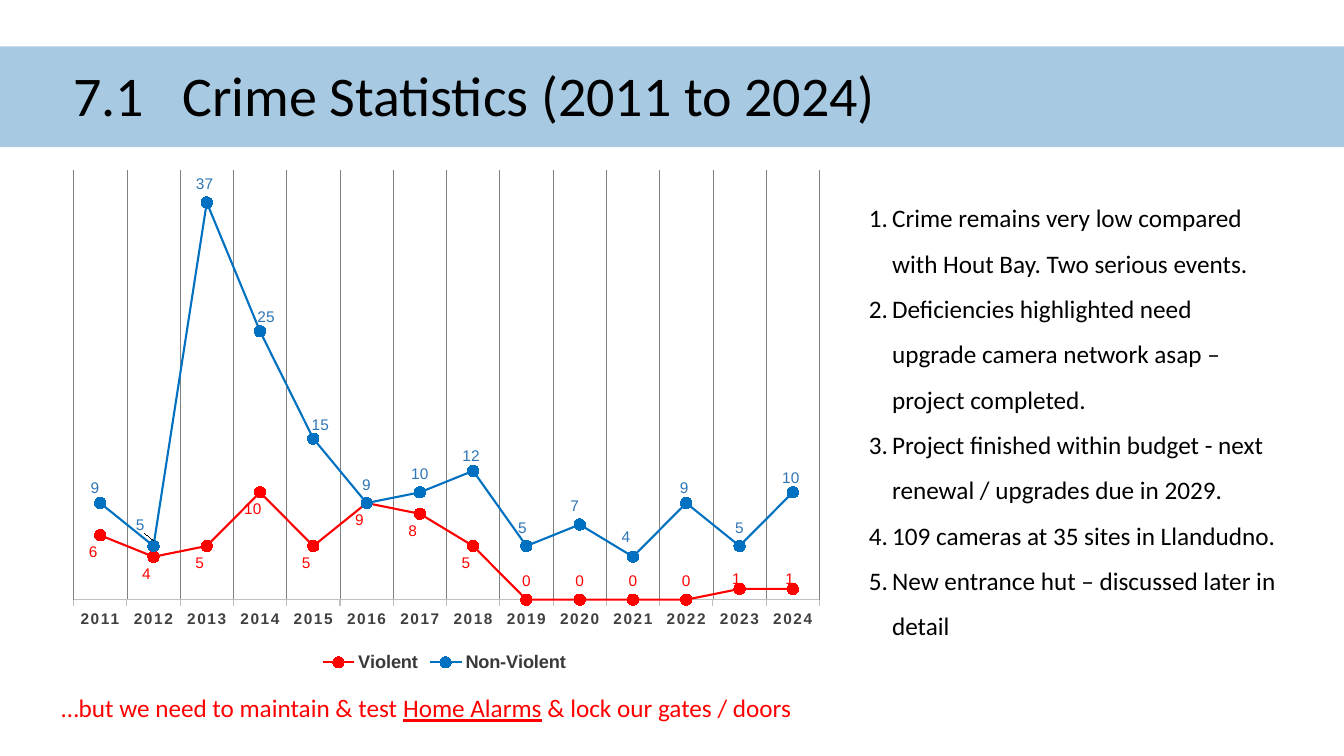
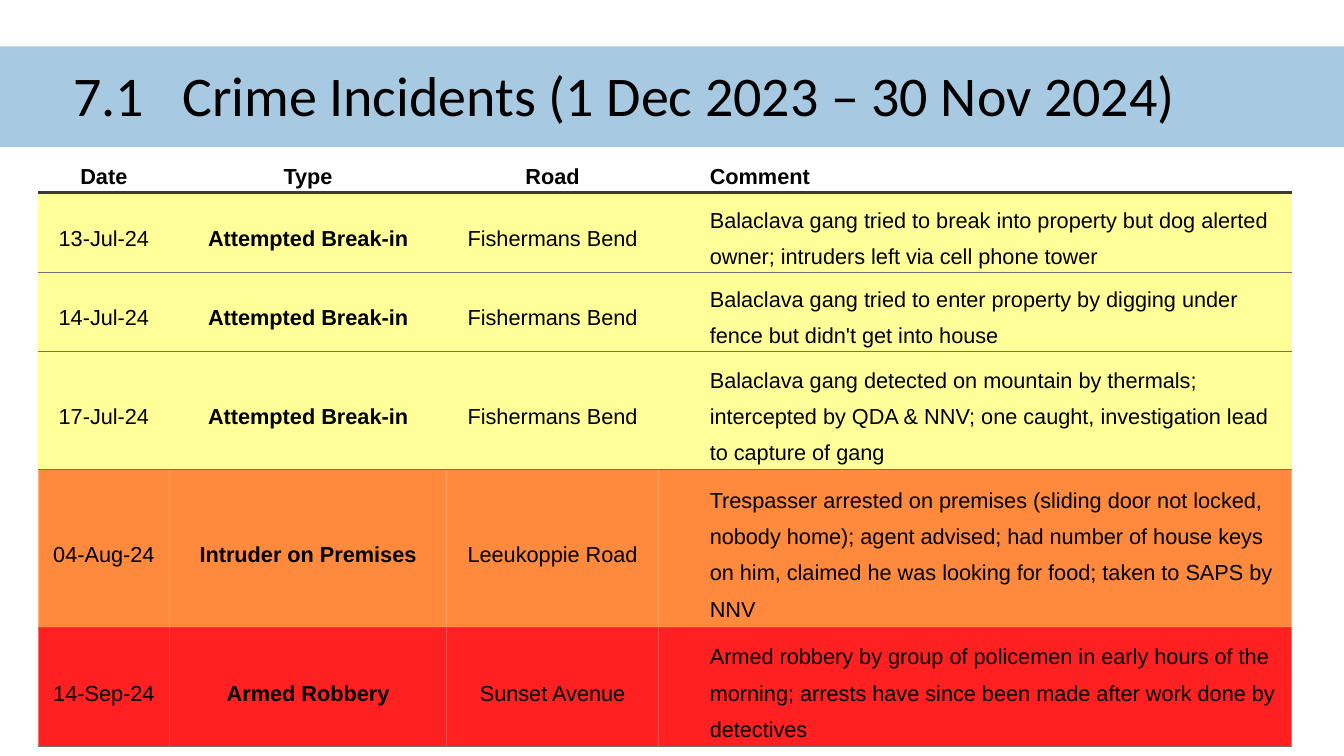
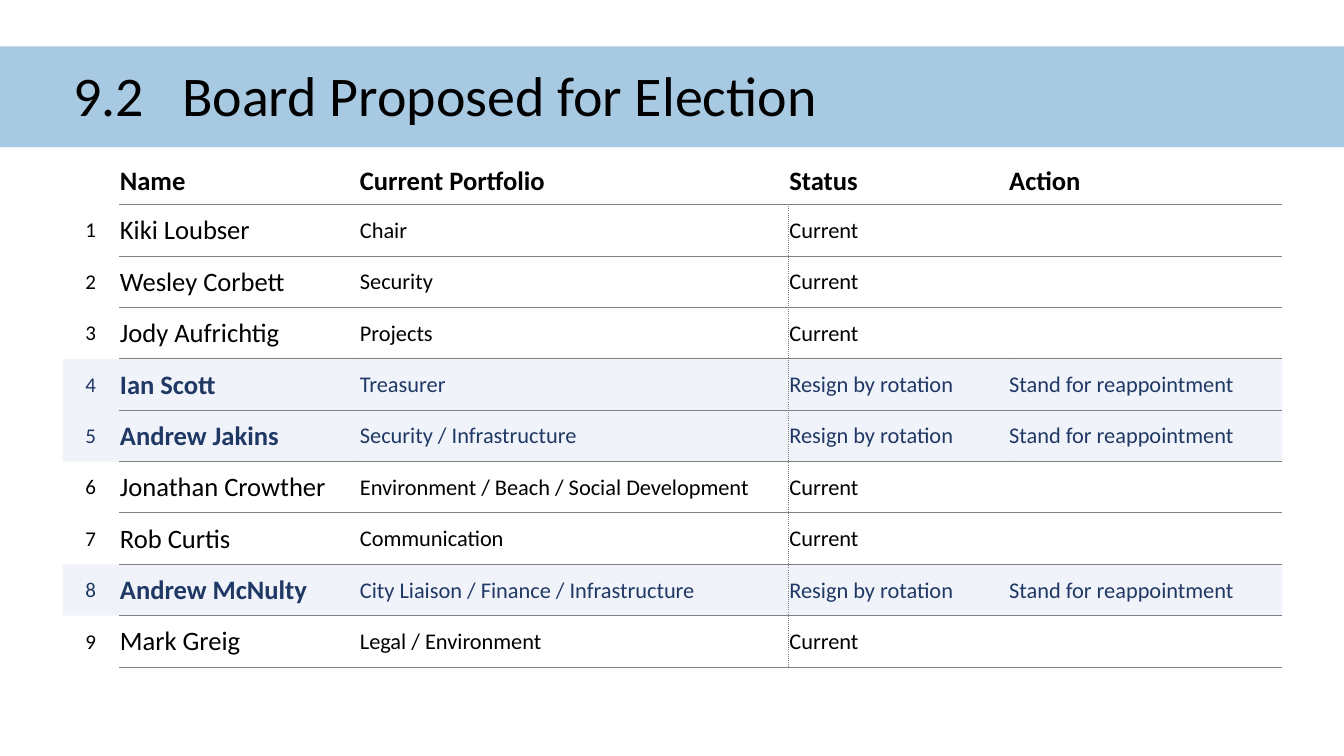
import pptx
import pptx.chart.data
import pptx.dml.color
import pptx.enum.chart
import pptx.enum.shapes
import pptx.enum.text
import pptx.oxml
import pptx.oxml.ns
import pptx.util

PX = 9144  # EMU in one px, 100 px to the inch
WIDE, HIGH = 1333, 750

HUES = {
    "ink": "000000", "band": "3C8AC0", "red": "FF0000", "blue": "0070C0",
    "tag": "2E75B6", "grey": "808080", "rule": "767171", "dark": "3B3838",
    "axis": "BFBFBF", "year": "404040", "lemon": "FFFF99",
    "amber": "FF6600", "navy": "203864", "pale": "B4C7E7",
}
MID = pptx.enum.text.MSO_ANCHOR.MIDDLE
CENTER = pptx.enum.text.PP_ALIGN.CENTER
SPOT = pptx.enum.chart.XL_LABEL_POSITION

YEARS = [str(year) for year in range(2011, 2025)]
VIOLENT = [6, 4, 5, 10, 5, 9, 8, 5, 0, 0, 0, 0, 1, 1]
OTHER = [9, 5, 37, 25, 15, 9, 10, 12, 5, 7, 4, 9, 5, 10]
# Label shifts: point -> (side, right, down)
LOW = {i: ("BELOW", -7, -2) for i in range(8)}
LOW.update({i: ("ABOVE", -3, 8) for i in (12, 13)})
HIGHER = {i: ("ABOVE", dx, dy) for i, dx, dy in (
    (0, -5, 3), (1, -13, -3), (2, -2, 0), (3, 6, 4), (4, 7, 5), (7, -2, 3),
    (8, -4, 0), (9, -5, 0), (10, -7, -2), (11, -2, 3), (13, -2, 4))}

NOTES = [
    "Crime remains very low compared with Hout Bay. Two serious events.",
    "Deficiencies highlighted need upgrade camera network asap – project completed.",
    "Project finished within budget - next renewal / upgrades due in 2029.",
    "109 cameras at 35 sites in Llandudno.",
    "New entrance hut – discussed later in detail",
]

# Incidents: height, fill, opacity, texts
EVENTS = [
    (43, None, 100, ("Date", "Type", "Road", "Comment")),
    (79, "lemon", 100, (
        "13-Jul-24", "Attempted Break-in", "Fishermans Bend",
        "Balaclava gang tried to break into property but dog alerted owner; "
        "intruders left via cell phone tower")),
    (75, "lemon", 100, (
        "14-Jul-24", "Attempted Break-in", "Fishermans Bend",
        "Balaclava gang tried to enter property by digging under fence but "
        "didn't get into house")),
    (109, "lemon", 100, (
        "17-Jul-24", "Attempted Break-in", "Fishermans Bend",
        "Balaclava gang detected on mountain by thermals; intercepted by "
        "QDA & NNV; one caught, investigation lead to capture of gang")),
    (157, "amber", 76, (
        "04-Aug-24", "Intruder on Premises", "Leeukoppie Road",
        "Trespasser arrested on premises (sliding door not locked, nobody "
        "home); agent advised; had number of house keys on him, claimed he "
        "was looking for food; taken to SAPS by NNV")),
    (118, "red", 87, (
        "14-Sep-24", "Armed Robbery", "Sunset Avenue",
        "Armed robbery by group of policemen in early hours of the morning; "
        "arrests have since been made after work done by detectives")),
]

# Board: name, portfolio, whether up for rotation
BOARD = [
    ("Kiki Loubser", "Chair", False),
    ("Wesley Corbett", "Security", False),
    ("Jody Aufrichtig", "Projects", False),
    ("Ian Scott", "Treasurer", True),
    ("Andrew Jakins", "Security / Infrastructure", True),
    ("Jonathan Crowther", "Environment / Beach / Social Development", False),
    ("Rob Curtis", "Communication", False),
    ("Andrew McNulty", "City Liaison / Finance / Infrastructure", True),
    ("Mark Greig", "Legal / Environment", False),
]


# Basics
def px(*nums):
    return [pptx.util.Emu(n * PX) for n in nums]


def rgb(hue):
    return pptx.dml.color.RGBColor.from_string(HUES[hue])


def style(font, size, hue="ink", face="Calibri", bold=False):
    font.size = pptx.util.Pt(size)
    font.name = face
    font.bold = bold
    font.color.rgb = rgb(hue)


def stroke(line, hue, width):
    line.color.rgb = rgb(hue)
    line.width = pptx.util.Pt(width)


def add(parent, tag, **attrs):
    node = pptx.oxml.ns.qn(tag)
    item = parent.makeelement(node, attrs)
    parent.append(item)
    return item


def paint(fill, props, hue, alpha=100):
    fill.solid()
    fill.fore_color.rgb = rgb(hue)
    if alpha < 100:
        tint = props.find(pptx.oxml.ns.qn("a:solidFill"))[0]
        add(tint, "a:alpha", val=str(alpha * 1000))


def text_box(slide, *area):
    frame = slide.shapes.add_textbox(*px(*area)).text_frame
    frame.word_wrap = True
    return frame


# Band and title on every slide
def start(deck, num, title):
    slide = deck.slides.add_slide(deck.slide_layouts[6])
    rect = pptx.enum.shapes.MSO_SHAPE.RECTANGLE
    band = slide.shapes.add_shape(rect, *px(0, 46, WIDE, 100))
    band.shadow.inherit = False
    band.line.fill.background()
    paint(band.fill, band.element.spPr, "band", 45)
    frame = text_box(slide, 63, 52, 1150, 91)
    frame.vertical_anchor = MID
    para = frame.paragraphs[0]
    para.text = f"{num}\t{title}"
    para.line_spacing = 0.9
    tabs = add(para._p.get_or_add_pPr(), "a:tabLst")
    add(tabs, "a:tab", pos=str(108 * PX), algn="l")
    style(para.font, 40)
    return slide


# Line chart
def label(line, hue, shifts, wide, high):
    tags = line.data_labels
    tags.show_value = True
    tags.position = SPOT.ABOVE
    style(tags.font, 11, hue, "Arial")
    for i, (side, dx, dy) in shifts.items():
        tag = line.points[i].data_label
        style(tag.font, 11, hue, "Arial")
        tag.position = SPOT[side]
        node = line._element.xpath(f'c:dLbls/c:dLbl[c:idx/@val="{i}"]')[0]
        place = add(node, "c:layout")
        node.insert(1, place)
        spot = add(place, "c:manualLayout")
        add(spot, "c:x", val=f"{dx / wide:.4f}")
        add(spot, "c:y", val=f"{dy / high:.4f}")


def set_plot(chart, **box):
    area = chart._chartSpace.chart.plotArea
    for old in area.findall(pptx.oxml.ns.qn("c:layout")):
        area.remove(old)
    place = add(area, "c:layout")
    area.insert(0, place)
    spot = add(place, "c:manualLayout")
    add(spot, "c:layoutTarget", val="inner")
    add(spot, "c:xMode", val="edge")
    add(spot, "c:yMode", val="edge")
    for key, val in box.items():
        add(spot, f"c:{key}", val=str(val))


def set_axes(chart):
    years, count = chart.category_axis, chart.value_axis
    years.has_major_gridlines = True
    stroke(years.major_gridlines.format.line, "grey", 0.5)
    stroke(years.format.line, "axis", 0.75)
    style(years.tick_labels.font, 11, "year", "Arial", True)
    for props in years._element.xpath(".//a:defRPr"):
        props.set("spc", "100")
    count.has_major_gridlines = False
    count.minimum_scale, count.maximum_scale = 0, 40
    count.major_unit = 5
    count.tick_label_position = pptx.enum.chart.XL_TICK_LABEL_POSITION.NONE
    count.format.line.fill.background()


def add_lines(slide, left, top, wide, high):
    data = pptx.chart.data.CategoryChartData(number_format="0")
    data.categories = YEARS
    data.add_series("Violent", VIOLENT)
    data.add_series("Non-Violent", OTHER)
    kind = pptx.enum.chart.XL_CHART_TYPE.LINE_MARKERS
    chart = slide.shapes.add_chart(
        kind, *px(left, top, wide, high), data).chart
    style(chart.font, 13)
    chart.has_title = False
    chart.has_legend = True
    chart.legend.position = pptx.enum.chart.XL_LEGEND_POSITION.BOTTOM
    chart.legend.include_in_layout = False
    style(chart.legend.font, 13, "dark", "Arial", True)
    plot = chart.plots[0]
    plot.vary_by_categories = False
    looks = (("red", "red", LOW), ("blue", "tag", HIGHER))
    for line, (hue, tag, shifts) in zip(plot.series, looks):
        line.smooth = False
        stroke(line.format.line, hue, 1.5)
        line.marker.style = pptx.enum.chart.XL_MARKER_STYLE.CIRCLE
        line.marker.size = 8
        line.marker.format.fill.solid()
        line.marker.format.fill.fore_color.rgb = rgb(hue)
        stroke(line.marker.format.line, hue, 0.75)
        label(line, tag, shifts, wide, high)
    set_axes(chart)
    set_plot(chart, x=0.048, y=0.042, w=0.91, h=0.813)


# Tables
def add_grid(slide, left, top, cols, rows):
    area = px(left, top, sum(cols), sum(rows))
    grid = slide.shapes.add_table(len(rows), len(cols), *area).table
    grid.first_row = grid.horz_banding = False
    for col, wide in zip(grid.columns, px(*cols)):
        col.width = wide
    for row, high in zip(grid.rows, px(*rows)):
        row.height = high
    return grid


def edge(cell, **sides):
    props = cell._tc.get_or_add_tcPr()
    for side in "LRTB":
        if side not in sides:
            add(add(props, f"a:ln{side}", w="0"), "a:noFill")
            continue
        hue, width, dash = sides[side]
        line = add(props, f"a:ln{side}", w=str(int(width * 12700)))
        add(add(line, "a:solidFill"), "a:srgbClr", val=HUES[hue])
        add(line, "a:prstDash", val=dash)


def fill_cell(cell, text, sides, fill=None, alpha=100):
    edge(cell, **sides)
    if fill:
        paint(cell.fill, cell._tc.tcPr, fill, alpha)
    else:
        cell.fill.background()
    cell.vertical_anchor = MID
    cell.margin_left, cell.margin_right, cell.margin_top, cell.margin_bottom = px(
        1, 1, 1, 0)
    para = cell.text_frame.paragraphs[0]
    para.text = text
    return para


def add_events(slide):
    grid = add_grid(slide, 38, 148, (130, 275, 210, 628),
                    [event[0] for event in EVENTS])
    thin, thick = ("rule", 1, "solid"), ("dark", 2.25, "solid")
    for r, (_, fill, alpha, texts) in enumerate(EVENTS):
        sides = {"B": thin if r else thick}
        if r:
            sides["T"] = thick if r == 1 else thin
        for c, text in enumerate(texts):
            cell = grid.cell(r, c)
            para = fill_cell(cell, text, sides, fill, alpha)
            para.line_spacing = 1.5
            if c < 3:
                para.alignment = CENTER
            else:
                para._p.get_or_add_pPr().set("marL", str(50 * PX))
            style(para.font, 15.5, face="Arial", bold=r == 0 or c == 1)


def add_board(slide):
    rows = [("", "Name", "Current Portfolio", "Status", "Action")]
    for i, (name, role, due) in enumerate(BOARD, 1):
        state = ("Resign by rotation", "Stand for reappointment")
        rows.append((str(i), name, role, *(state if due else ("Current", ""))))
    grid = add_grid(slide, 62, 156, (56, 238, 426, 218, 272),
                    [47] + [51] * len(BOARD))
    thin, dots = ("grey", 0.75, "solid"), ("grey", 0.5, "sysDot")
    for r, texts in enumerate(rows):
        due = r > 0 and BOARD[r - 1][2]
        for c, text in enumerate(texts):
            sides = {"B": thin} if c else {}
            if r and c:
                sides["T"] = thin
            if r and c in (2, 3):
                sides["R" if c == 2 else "L"] = dots
            para = fill_cell(grid.cell(r, c), text, sides,
                             "pale" if due else None, 20)
            if c == 0:
                para.alignment = CENTER
            size = 19 if r == 0 else (15, 19, 16, 16, 16)[c]
            style(para.font, size, "navy" if due else "ink",
                  bold=r == 0 or (due and c == 1))


# Texts beside and below the chart
def add_notes(slide):
    frame = text_box(slide, 847, 181, 434, 460)
    for i, note in enumerate(NOTES):
        para = frame.add_paragraph() if i else frame.paragraphs[0]
        para.text = note
        para.line_spacing = 1.5
        props = para._p.get_or_add_pPr()
        props.set("marL", str(28 * PX))
        props.set("indent", str(-23 * PX))
        add(props, "a:buFont", typeface="+mj-lt")
        add(props, "a:buAutoNum", type="arabicPeriod")
        style(para.font, 18)


def add_plea(slide):
    para = text_box(slide, 51, 682, 1088, 40).paragraphs[0]
    for text in ("…but we need to maintain & test ", "Home Alarms",
                 " & lock our gates / doors"):
        run = para.add_run()
        run.text = text
        if text == "Home Alarms":
            run.font.underline = True
    style(para.font, 18, "red")


def main():
    deck = pptx.Presentation()
    deck.slide_width, deck.slide_height = px(WIDE, HIGH)

    slide = start(deck, "7.1", "Crime Statistics (2011 to 2024)")
    add_lines(slide, 34, 147, 813, 524)
    add_notes(slide)
    add_plea(slide)

    add_events(start(deck, "7.1", "Crime Incidents (1 Dec 2023 – 30 Nov 2024)"))
    add_board(start(deck, "9.2", "Board Proposed for Election"))
    deck.save("out.pptx")


if __name__ == "__main__":
    main()
